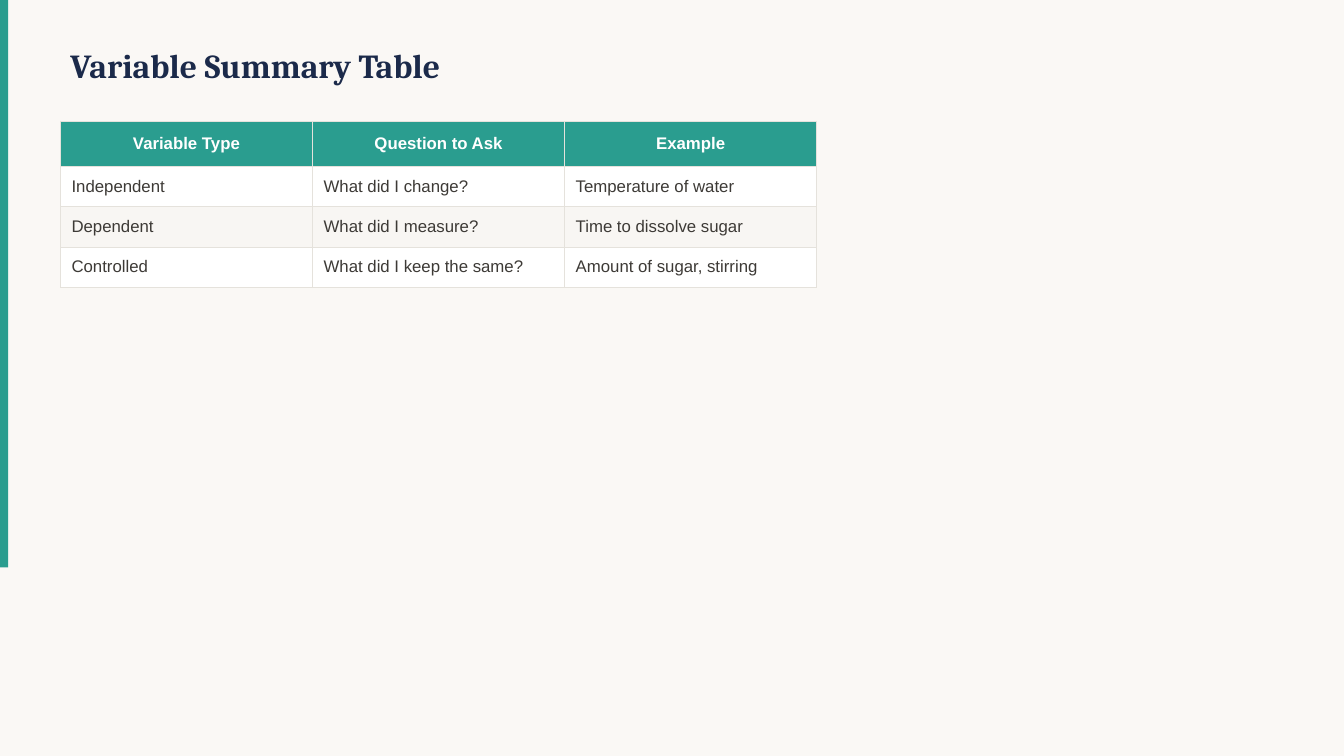
from pptx import Presentation
from pptx.dml.color import RGBColor
from pptx.enum.shapes import MSO_SHAPE
from pptx.enum.text import MSO_ANCHOR, PP_ALIGN
from pptx.oxml.ns import qn
from pptx.util import Pt
from lxml.etree import SubElement

TITLE = "Variable Summary Table"
ROWS = [
    ("Variable Type", "Question to Ask", "Example"),
    ("Independent", "What did I change?", "Temperature of water"),
    ("Dependent", "What did I measure?", "Time to dissolve sugar"),
    ("Controlled", "What did I keep the same?", "Amount of sugar, stirring"),
]
COLORS = {
    "page": "FAF8F5",
    "accent": "2A9D8F",
    "title": "1B2A4A",
    "header_text": "FFFFFF",
    "body_text": "3D3A36",
    "odd_row": "FFFFFF",
    "even_row": "F8F6F3",
    "border": "E5E2DC",
}
PX = 9144  # 100 px to the inch
SLIDE_SIZE = (1333, 750)
ACCENT_BAR = (0, 0, 8, 563)
TITLE_BOX = (60, 30, 1000, 70)
TABLE_LEFT, TABLE_TOP = 60, 120
COLUMN_WIDTH, HEADER_HEIGHT, ROW_HEIGHT = 250, 45, 40
CELL_PAD_X, CELL_PAD_Y = 11, 6
BORDER_WIDTH = Pt(0.5)


def emu(*lengths):
    return [length * PX for length in lengths]


def paint(fill, color):
    fill.solid()
    fill.fore_color.rgb = RGBColor.from_string(COLORS[color])


def add_span(para, text, font, size, color, bold):
    span = para.add_run()
    span.text = text
    span.font.name = font
    span.font.size = Pt(size)
    span.font.bold = bold
    span.font.color.rgb = RGBColor.from_string(COLORS[color])


def add_borders(cell):
    properties = cell._tc.get_or_add_tcPr()
    for side in ("a:lnL", "a:lnR", "a:lnT", "a:lnB"):
        line = SubElement(properties, qn(side), w=str(BORDER_WIDTH))
        fill = SubElement(line, qn("a:solidFill"))
        SubElement(fill, qn("a:srgbClr"), val=COLORS["border"])


def fill_cell(cell, text, row_index):
    is_header = row_index == 0
    add_borders(cell)
    if is_header:
        paint(cell.fill, "accent")
    else:
        paint(cell.fill, "odd_row" if row_index % 2 else "even_row")
    cell.vertical_anchor = MSO_ANCHOR.MIDDLE
    cell.margin_left = cell.margin_right = CELL_PAD_X * PX
    cell.margin_top = cell.margin_bottom = CELL_PAD_Y * PX
    para = cell.text_frame.paragraphs[0]
    para.alignment = PP_ALIGN.CENTER if is_header else PP_ALIGN.LEFT
    add_span(para, text, "Arial", 12, "header_text" if is_header else "body_text", is_header)


def add_summary_table(page):
    columns = len(ROWS[0])
    height = HEADER_HEIGHT + ROW_HEIGHT * (len(ROWS) - 1)
    frame = page.shapes.add_table(
        len(ROWS), columns, *emu(TABLE_LEFT, TABLE_TOP, COLUMN_WIDTH * columns, height)
    )
    table = frame.table
    for column in table.columns:
        column.width = COLUMN_WIDTH * PX
    for row_index, texts in enumerate(ROWS):
        table.rows[row_index].height = (ROW_HEIGHT if row_index else HEADER_HEIGHT) * PX
        for column_index, text in enumerate(texts):
            fill_cell(table.cell(row_index, column_index), text, row_index)


def main():
    deck = Presentation()
    deck.slide_width, deck.slide_height = emu(*SLIDE_SIZE)
    page = deck.slides.add_slide(deck.slide_layouts[6])
    paint(page.background.fill, "page")

    bar = page.shapes.add_shape(MSO_SHAPE.RECTANGLE, *emu(*ACCENT_BAR))
    bar.shadow.inherit = False
    paint(bar.fill, "accent")
    bar.line.fill.background()

    box = page.shapes.add_textbox(*emu(*TITLE_BOX)).text_frame
    box.word_wrap = True
    box.vertical_anchor = MSO_ANCHOR.MIDDLE
    add_span(box.paragraphs[0], TITLE, "Cambria", 24, "title", True)

    add_summary_table(page)
    deck.save("out.pptx")


if __name__ == "__main__":
    main()
